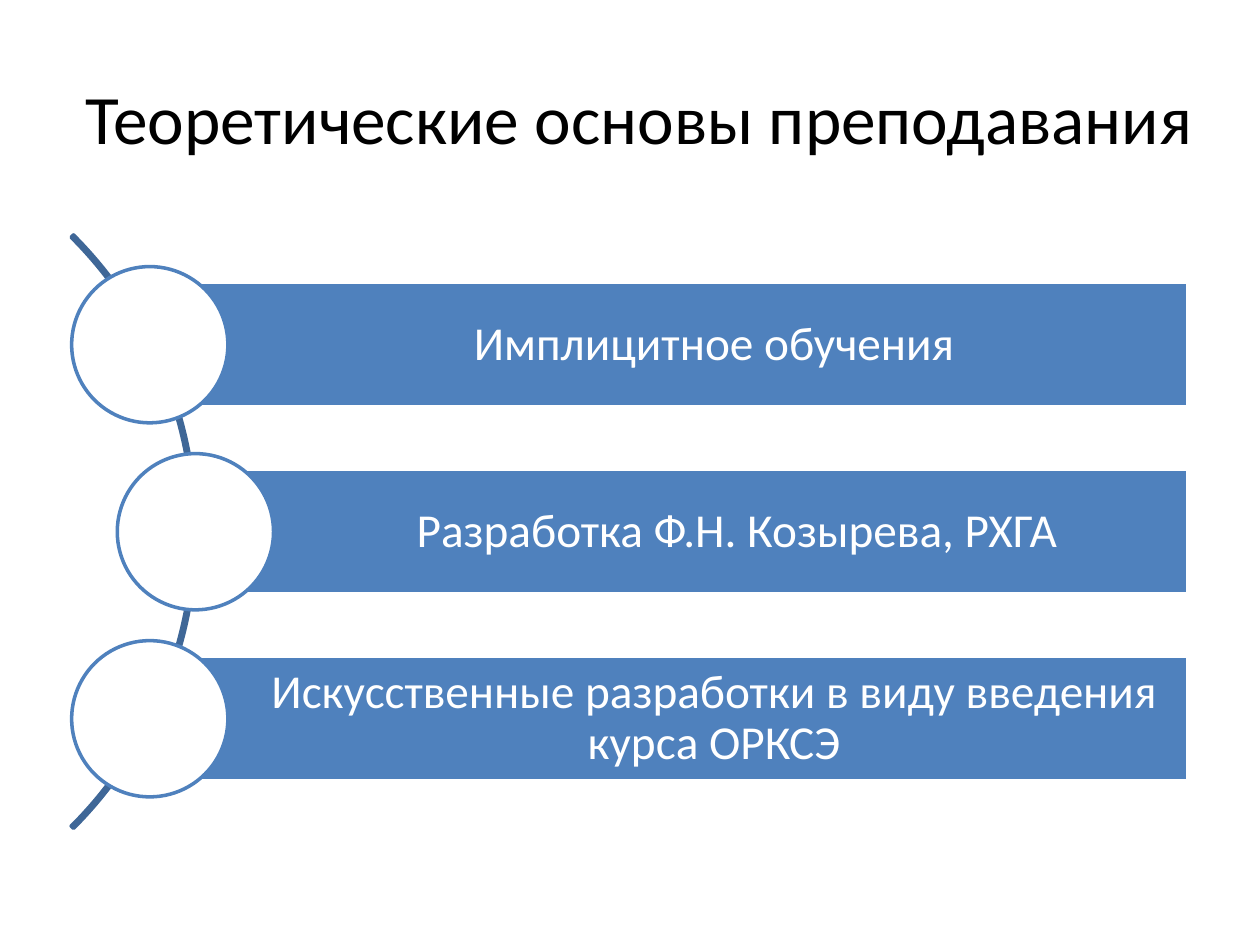
import dataclasses

import pptx
import pptx.dml.color
import pptx.enum.shapes
import pptx.enum.text
import pptx.util

Cm = pptx.util.Cm
Pt = pptx.util.Pt
RGBColor = pptx.dml.color.RGBColor
Shapes = pptx.enum.shapes.MSO_SHAPE

BLACK = RGBColor(0x00, 0x00, 0x00)
WHITE = RGBColor(0xFF, 0xFF, 0xFF)
BLUE = RGBColor(0x4F, 0x81, 0xBD)
DARK_BLUE = RGBColor(0x3F, 0x67, 0x97)

# Lengths in centimetres
ARC_CENTER_X, ARC_DIAMETER = -4.5, 16.92
MIDDLE_Y, ROW_PITCH = 10.72, 3.77
BAR_RIGHT, BAR_HEIGHT = 23.95, 2.51
CIRCLE_DIAMETER = 3.15


@dataclasses.dataclass
class Row:
    text: str
    left: float  # left edge of the bar and centre of the circle


ROWS = [
    Row("Имплицитное обучения", 3.02),
    Row("Разработка Ф.Н. Козырева, РХГА", 3.94),
    Row("Искусственные разработки в виду введения курса ОРКСЭ", 3.02),
]


def add_outlined(page, kind, left: float, top: float, width: float,
                 height: float, fill: RGBColor | None, line: RGBColor):
    shape = page.shapes.add_shape(kind, Cm(left), Cm(top), Cm(width), Cm(height))
    shape.shadow.inherit = False
    if fill is None:
        shape.fill.background()
    else:
        shape.fill.solid()
        shape.fill.fore_color.rgb = fill
    shape.line.color.rgb = line
    shape.line.width = Pt(2)
    return shape


def write(shape, text: str, size: float, color: RGBColor):
    frame = shape.text_frame
    frame.word_wrap = True
    frame.vertical_anchor = pptx.enum.text.MSO_ANCHOR.MIDDLE
    para = frame.paragraphs[0]
    para.text = text
    para.alignment = pptx.enum.text.PP_ALIGN.CENTER
    para.font.name = "Calibri"
    para.font.size = Pt(size)
    para.font.color.rgb = color
    return para


def add_row(page, row: Row, center_y: float) -> None:
    bar = add_outlined(page, Shapes.RECTANGLE, row.left, center_y - BAR_HEIGHT / 2,
                       BAR_RIGHT - row.left, BAR_HEIGHT, BLUE, WHITE)
    write(bar, row.text, 27, WHITE).line_spacing = 0.9
    frame = bar.text_frame
    frame.margin_left = Cm(2)
    frame.margin_top = frame.margin_right = frame.margin_bottom = Cm(0.18)

    radius = CIRCLE_DIAMETER / 2
    add_outlined(page, Shapes.OVAL, row.left - radius, center_y - radius,
                 CIRCLE_DIAMETER, CIRCLE_DIAMETER, WHITE, BLUE)


def main() -> None:
    deck = pptx.Presentation()
    deck.slide_width, deck.slide_height = Cm(25.4), Cm(19.05)
    page = deck.slides.add_slide(deck.slide_layouts[6])

    # Title
    title = page.shapes.add_textbox(Cm(1.27), Cm(0.76), Cm(23.24), Cm(3.18))
    write(title, "Теоретические основы преподавания", 39.6, BLACK)

    # Arc behind the rows, from 315 to 45 degrees
    radius = ARC_DIAMETER / 2
    arc = add_outlined(page, Shapes.BLOCK_ARC, ARC_CENTER_X - radius,
                       MIDDLE_Y - radius, ARC_DIAMETER, ARC_DIAMETER,
                       None, DARK_BLUE)
    for index, value in enumerate((189, 27, 0.004)):
        arc.adjustments[index] = value

    # Bars with circles
    for index, row in enumerate(ROWS):
        add_row(page, row, MIDDLE_Y + (index - 1) * ROW_PITCH)

    deck.save("out.pptx")


if __name__ == "__main__":
    main()
